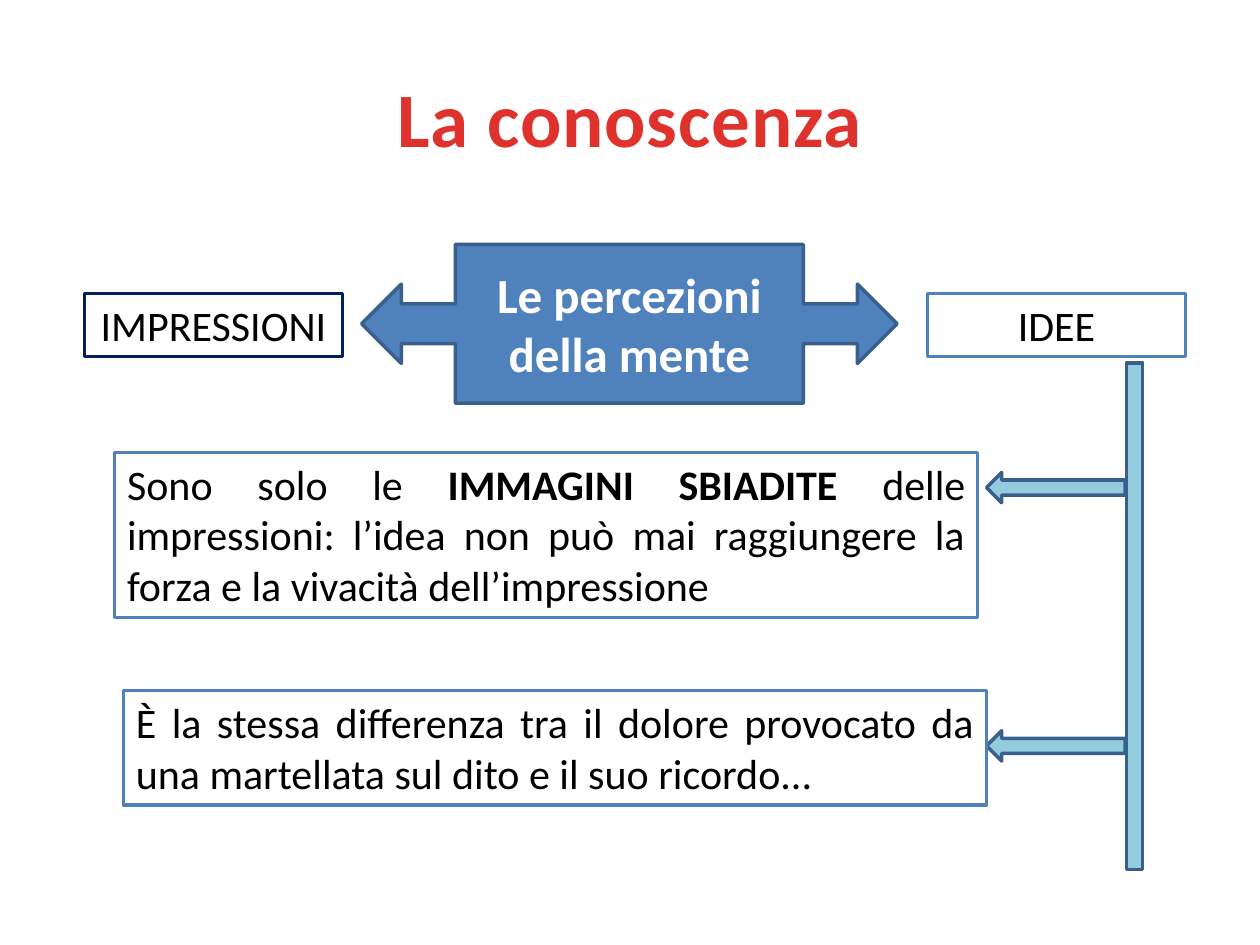
from dataclasses import dataclass

from pptx import Presentation
from pptx import util as u
from pptx.dml.color import RGBColor
from pptx.enum import shapes, text

SHAPE = shapes.MSO_SHAPE
ALIGN = text.PP_ALIGN
ANCHOR = text.MSO_ANCHOR


@dataclass(frozen=True)
class Theme:
    font: str = "Calibri"
    title_size: int = 44
    callout_size: int = 28
    body_size: int = 24
    line_width: int = 2
    red: str = "E0322D"
    blue: str = "4F81BD"
    dark_blue: str = "3A5F8C"
    navy: str = "002060"
    aqua: str = "93CDDD"
    white: str = "FFFFFF"
    black: str = "000000"


class SlideBuilder:
    def __init__(self, slide, theme):
        self.slide = slide
        self.theme = theme

    def add_text(self, sp, runs, size, color, align=ALIGN.CENTER, anchor=ANCHOR.MIDDLE):
        """Fill a shape with one paragraph of (text, bold) runs."""
        tf = sp.text_frame
        for name, value in {"word_wrap": True, "vertical_anchor": anchor}.items():
            setattr(tf, name, value)
        p = tf.paragraphs[0]
        p.alignment = align
        for words, bold in runs:
            r = p.add_run()
            r.text = words
            style = {"name": self.theme.font, "size": u.Pt(size), "bold": bold}
            for name, value in style.items():
                setattr(r.font, name, value)
            r.font.color.rgb = RGBColor.from_string(color)
        return p

    def title(self, words, *box):
        sp = self.slide.shapes.add_textbox(*map(u.Inches, box))
        p = self.add_text(sp, [(words, True)], self.theme.title_size, self.theme.red)
        p.runs[0]._r.get_or_add_rPr().set("spc", "50")

    def shape(self, kind, box, fill, line):
        sp = self.slide.shapes.add_shape(kind, *map(u.Inches, box))
        sp.shadow.inherit = False
        sp.fill.solid()
        sp.fill.fore_color.rgb = RGBColor.from_string(fill)
        sp.line.color.rgb = RGBColor.from_string(line)
        sp.line.width = u.Pt(self.theme.line_width)
        return sp

    def callout(self, words, *box):
        t = self.theme
        sp = self.shape(SHAPE.LEFT_RIGHT_ARROW_CALLOUT, box, t.blue, t.dark_blue)
        for i, value in enumerate((0.25, 0.25, 0.25, 0.65)):
            sp.adjustments[i] = value
        self.add_text(sp, [(words, True)], t.callout_size, t.white)

    def text_box(self, runs, box, line, align=ALIGN.CENTER):
        t = self.theme
        sp = self.shape(SHAPE.RECTANGLE, box, t.white, line)
        self.add_text(sp, runs, t.body_size, t.black, align, ANCHOR.TOP)
        sp.text_frame.auto_size = text.MSO_AUTO_SIZE.SHAPE_TO_FIT_TEXT

    def branch(self, kind, *box):
        self.shape(kind, box, self.theme.aqua, self.theme.dark_blue)


def main():
    prs = Presentation()
    prs.slide_width, prs.slide_height = u.Inches(10), u.Inches(7.5)
    theme = Theme()
    s = SlideBuilder(prs.slides.add_slide(prs.slide_layouts[6]), theme)

    s.title("La conoscenza", 0.5, 0.3, 9, 1.25)
    s.callout("Le percezioni della mente", 2.87, 1.94, 4.25, 1.26)
    for label, left, line in (
        ("IMPRESSIONI", 0.67, theme.navy),
        ("IDEE", 7.36, theme.blue),
    ):
        s.text_box([(label, False)], (left, 2.33, 2.05, 0.5), line)

    s.branch(SHAPE.RECTANGLE, 8.94, 2.88, 0.13, 4.02)
    faded_images = [
        ("Sono solo le ", False),
        ("IMMAGINI SBIADITE ", True),
        ("delle impressioni: l’idea non può mai raggiungere la forza "
         "e la vivacità dell’impressione", False),
    ]
    hammer_example = [
        ("È la stessa differenza tra il dolore provocato da una martellata "
         "sul dito e il suo ricordo...", False),
    ]
    for runs, left, top, height, arrow_top in (
        (faded_images, 0.91, 3.59, 1.31, 3.75),
        (hammer_example, 0.98, 5.48, 0.91, 5.8),
    ):
        s.branch(SHAPE.LEFT_ARROW, 7.83, arrow_top, 1.1, 0.24)
        s.text_box(runs, (left, top, 6.85, height), theme.blue, ALIGN.JUSTIFY)

    prs.save("out.pptx")


if __name__ == "__main__":
    main()
